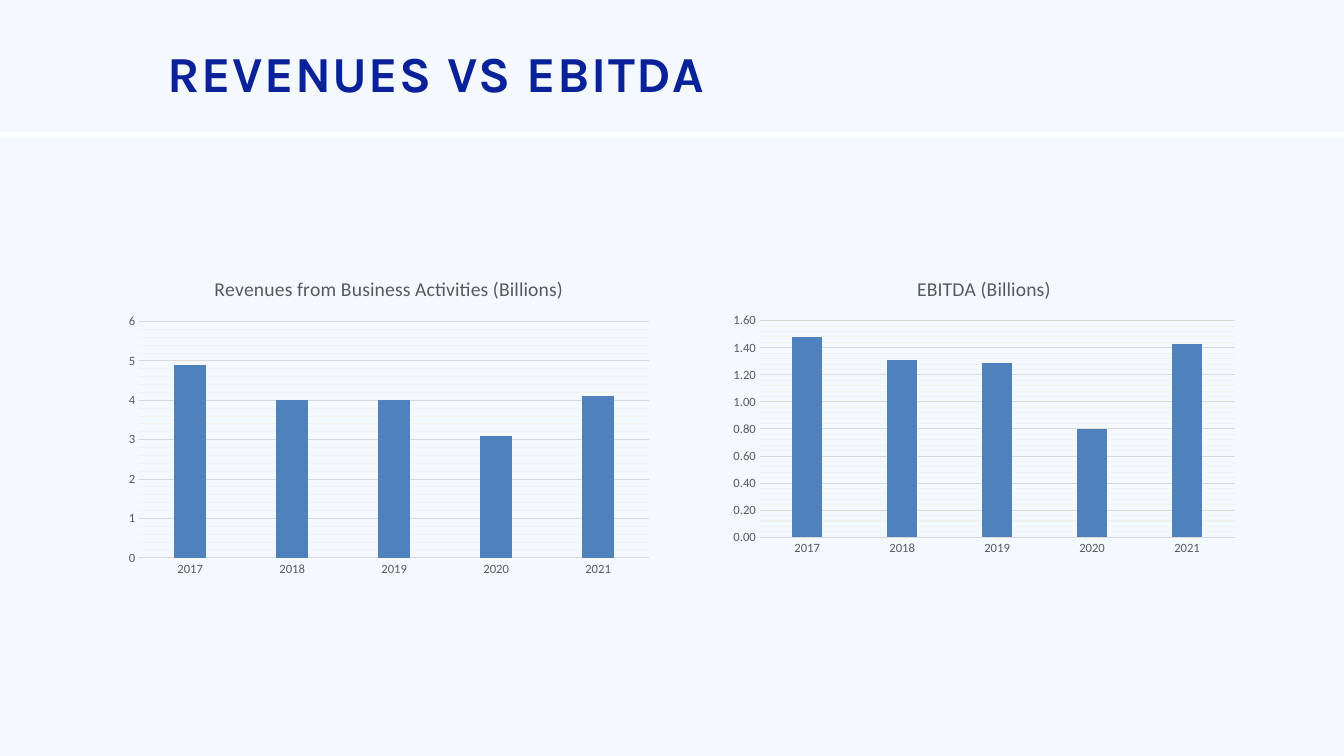
from copy import deepcopy

from pptx import Presentation
from pptx import util as u
from pptx.chart import data
from pptx.dml import color
from pptx.enum import chart as charts, shapes, text

PX = 914400 / 100.8
WIDTH, HEIGHT = 1344, 756
YEARS = ["2017", "2018", "2019", "2020", "2021"]


def px(*lengths):
    return [u.Emu(round(length * PX)) for length in lengths]


class SlideBuilder:
    COLORS = {
        "band": "F4F8FF",
        "title": "092199",
        "label": "595959",
        "grid": "D9D9D9",
        "minor": "F2F2F2",
        "bar": "4F81BD",
    }
    TITLE_FONT, CHART_FONT = "Karla", "Calibri"

    def __init__(self, page):
        self.page = page

    def rgb(self, name):
        return color.RGBColor.from_string(self.COLORS[name])

    def style_font(self, font, name, size, shade, bold=False):
        font.name, font.size, font.bold = name, u.Pt(size), bold
        font.color.rgb = self.rgb(shade)

    def style_line(self, line, shade):
        line.color.rgb = self.rgb(shade)
        line.width = u.Pt(0.75)

    def style_gridlines(self, axis):
        """Show both sets of gridlines; the minor set is a paler copy."""
        axis.has_major_gridlines = axis.has_minor_gridlines = True
        self.style_line(axis.major_gridlines.format.line, "grid")
        major_style = axis._element.xpath("c:majorGridlines/c:spPr")[0]
        minor_style = deepcopy(major_style)
        minor_style.xpath(".//a:srgbClr")[0].set("val", self.COLORS["minor"])
        axis._element.xpath("c:minorGridlines")[0].append(minor_style)

    def band(self, top, height):
        band = self.page.shapes.add_shape(
            shapes.MSO_SHAPE.RECTANGLE, *px(0, top, WIDTH, height))
        band.shadow.inherit = False
        band.fill.solid()
        band.fill.fore_color.rgb = self.rgb("band")
        band.line.fill.background()

    def title(self, words, *place):
        title = self.page.shapes.title
        title.left, title.top, title.width, title.height = px(*place)
        # Bring the placeholder in front of the bands
        self.page.shapes._spTree.append(title._element)
        frame = title.text_frame
        frame.text = words
        frame.vertical_anchor = text.MSO_ANCHOR.TOP
        frame.auto_size = text.MSO_AUTO_SIZE.NONE
        frame.margin_left = frame.margin_right = 0
        frame.margin_top = frame.margin_bottom = 0
        para = frame.paragraphs[0]
        para.alignment = text.PP_ALIGN.LEFT
        self.style_font(para.font, self.TITLE_FONT, 36, "title", bold=True)
        para.runs[0].font._element.set("spc", "100")

    def column_chart(self, heading, series_name, values, place,
                     top_value, step, number_format):
        chart_data = data.CategoryChartData()
        chart_data.categories = YEARS
        chart_data.add_series(series_name, values)
        chart = self.page.shapes.add_chart(
            charts.XL_CHART_TYPE.COLUMN_CLUSTERED, *px(*place), chart_data).chart
        chart.has_legend = False
        self.style_font(chart.font, self.CHART_FONT, 10, "label")

        chart.has_title = True
        chart.chart_title.include_in_layout = False
        frame = chart.chart_title.text_frame
        frame.text = heading
        self.style_font(frame.paragraphs[0].font, self.CHART_FONT, 14, "label")

        plot = chart.plots[0]
        plot.gap_width, plot.overlap = 219, -27
        plot.vary_by_categories = False
        bars = plot.series[0].format.fill
        bars.solid()
        bars.fore_color.rgb = self.rgb("bar")

        for axis in (chart.category_axis, chart.value_axis):
            axis.major_tick_mark = axis.minor_tick_mark = charts.XL_TICK_MARK.NONE
            self.style_font(axis.tick_labels.font, self.CHART_FONT, 9, "label")
        self.style_line(chart.category_axis.format.line, "grid")

        scale = chart.value_axis
        scale.format.line.fill.background()
        scale.minimum_scale, scale.maximum_scale = 0, top_value
        scale.major_unit, scale.minor_unit = step, step / 5
        self.style_gridlines(scale)
        scale.tick_labels.number_format = number_format
        scale.tick_labels.number_format_is_linked = False


def main():
    deck = Presentation()
    deck.slide_width, deck.slide_height = px(WIDTH, HEIGHT)
    builder = SlideBuilder(deck.slides.add_slide(deck.slide_layouts[5]))

    builder.band(0, 132)
    builder.band(138, HEIGHT - 138)
    builder.title("REVENUES VS EBITDA", 168, 42, 1093, 61)
    builder.column_chart(
        "Revenues from Business Activities (Billions)", "Series 1",
        [4.9, 4, 4, 3.1, 4.1], (118, 260, 542, 323), 6, 1, "0")
    builder.column_chart(
        "EBITDA (Billions)", "EBITDA (Billions)",
        [1.48, 1.31, 1.29, 0.8, 1.43], (723, 260, 522, 302), 1.6, 0.2, "0.00")
    deck.save("out.pptx")


if __name__ == "__main__":
    main()
